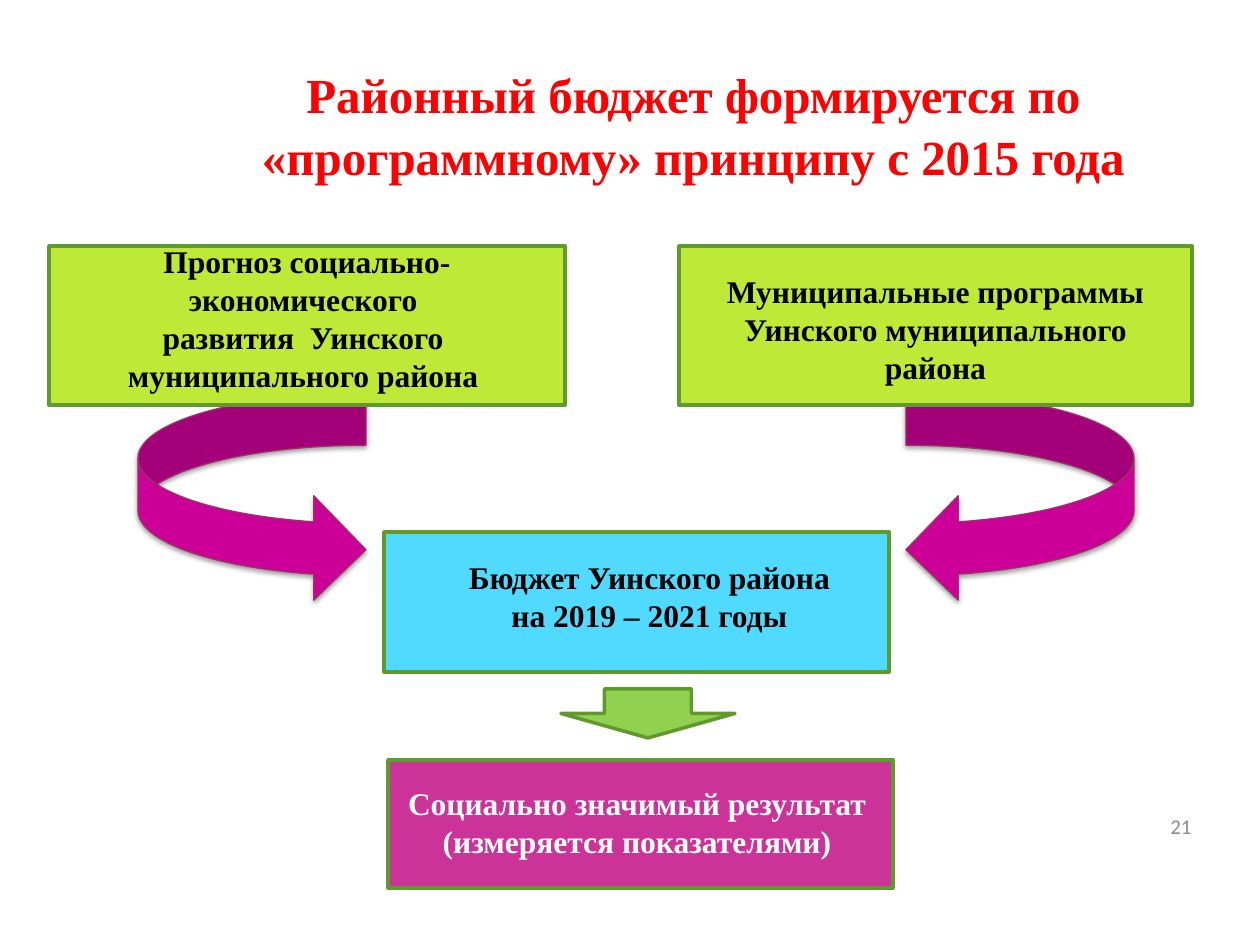
"""Builds a slide on how the district budget follows from forecasts and programmes."""
import pptx
import pptx.dml.color
import pptx.enum.shapes
import pptx.enum.text
import pptx.oxml
import pptx.oxml.ns
import pptx.util

RGBColor = pptx.dml.color.RGBColor
Shape = pptx.enum.shapes.MSO_SHAPE
Align = pptx.enum.text.PP_ALIGN
Anchor = pptx.enum.text.MSO_ANCHOR

RED = RGBColor(0xFF, 0x00, 0x00)
BLACK = RGBColor(0x00, 0x00, 0x00)
WHITE = RGBColor(0xFF, 0xFF, 0xFF)
GRAY = RGBColor(0x8C, 0x8C, 0x8C)
LIME = RGBColor(0xBF, 0xE9, 0x37)
SKY = RGBColor(0x51, 0xDA, 0xFF)
PINK = RGBColor(0xCC, 0x33, 0x99)
MAGENTA = RGBColor(0xCC, 0x00, 0x99)
PLUM = RGBColor(0x99, 0x33, 0x66)
GREEN = RGBColor(0x92, 0xD0, 0x50)
DARK_GREEN = RGBColor(0x5E, 0x9B, 0x2C)

SERIF = "Times New Roman"
SHADOW = (
    f'<a:effectLst {pptx.oxml.ns.nsdecls("a")}>'
    '<a:outerShdw blurRad="39370" dist="20320" dir="5400000" rotWithShape="0">'
    '<a:srgbClr val="000000"><a:alpha val="38000"/></a:srgbClr>'
    "</a:outerShdw></a:effectLst>"
)


def px(length):
    return pptx.util.Emu(round(length * 914400 / 126))


def place(area):
    return [px(length) for length in area]


def format_text(frame, size, color, font=SERIF, bold=True, align=Align.CENTER):
    for para in frame.paragraphs:
        para.alignment = align
        for span in para.runs:
            span.font.name = font
            span.font.size = pptx.util.Pt(size)
            span.font.bold = bold
            span.font.color.rgb = color


def add_title(page, text, area):
    title = page.shapes.title
    title.left, title.top, title.width, title.height = place(area)
    frame = title.text_frame
    frame.text = text
    frame.auto_size = pptx.enum.text.MSO_AUTO_SIZE.NONE
    frame.vertical_anchor = Anchor.MIDDLE
    frame.margin_right = px(35)
    frame.margin_bottom = px(15)
    frame.paragraphs[0].line_spacing = 1.05
    format_text(frame, 28, RED)


def add_figure(page, kind, area, fill, line=DARK_GREEN, weight=2):
    figure = page.shapes.add_shape(kind, *place(area))
    figure.shadow.inherit = False
    figure.fill.solid()
    figure.fill.fore_color.rgb = fill
    figure.line.color.rgb = line
    figure.line.width = pptx.util.Pt(weight)
    return figure


def add_curved_arrow(page, left, mirrored):
    area = (left, 393, 228, 209)
    arrow = add_figure(page, Shape.CURVED_RIGHT_ARROW, area, MAGENTA, PLUM, 0.75)
    properties = arrow.element.spPr
    if mirrored:
        properties.xfrm.set("flipH", "1")
    plain = properties.find(pptx.oxml.ns.qn("a:effectLst"))
    properties.replace(plain, pptx.oxml.parse_xml(SHADOW))


def add_text(page, text, area, color=BLACK, wrap=True):
    box = page.shapes.add_textbox(*place(area))
    frame = box.text_frame
    frame.word_wrap = wrap
    frame.text = text
    format_text(frame, 18, color)


def add_page_number(page, text, area):
    box = page.shapes.add_textbox(*place(area))
    frame = box.text_frame
    frame.word_wrap = True
    frame.vertical_anchor = Anchor.MIDDLE
    frame.text = text
    format_text(frame, 12, GRAY, "Calibri", False, Align.RIGHT)


def main():
    deck = pptx.Presentation()
    deck.slide_width, deck.slide_height = px(1260), px(945)
    page = deck.slides.add_slide(deck.slide_layouts[5])

    add_title(
        page,
        "Районный бюджет формируется по\v«программному» принципу с 2015 года",
        (178, 38, 1053, 179),
    )
    add_curved_arrow(page, 906, True)
    add_curved_arrow(page, 138, False)

    for area, fill in (
        ((388, 760, 505, 128), PINK),
        ((384, 532, 505, 140), SKY),
        ((679, 246, 513, 159), LIME),
        ((49, 246, 516, 159), LIME),
    ):
        add_figure(page, Shape.RECTANGLE, area, fill)

    add_page_number(page, "21", (1120, 790, 84, 72))
    add_text(
        page,
        "Прогноз социально-экономического \nразвития  Уинского \nмуниципального района ",
        (49, 236, 516, 165),
    )
    add_text(
        page,
        "Муниципальные программы Уинского муниципального района",
        (679, 266, 513, 127),
    )
    add_text(page, "Бюджет Уинского района на 2019 – 2021 годы", (443, 552, 413, 89))
    add_text(
        page,
        "Социально значимый результат \n(измеряется показателями) ",
        (393, 778, 496, 89),
        WHITE,
        False,
    )
    add_figure(page, Shape.DOWN_ARROW, (561, 689, 174, 49), GREEN)

    deck.save("out.pptx")


if __name__ == "__main__":
    main()
